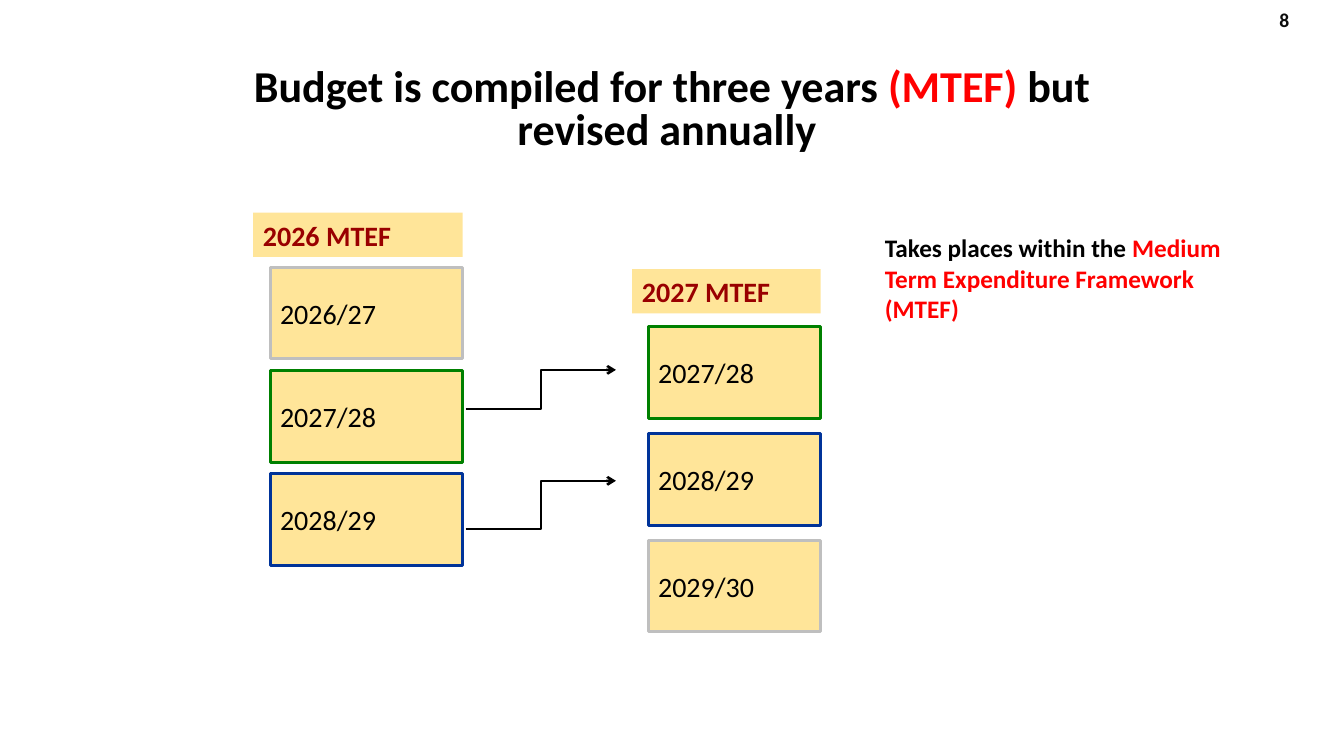
from dataclasses import dataclass

from lxml import etree
from pptx import Presentation
from pptx import util as u
from pptx.dml.color import RGBColor
from pptx.enum import shapes, text
from pptx.oxml import ns

prs = Presentation()
prs.slide_width, prs.slide_height = u.Inches(13.33), u.Inches(7.5)
s = prs.slides.add_slide(prs.slide_layouts[5])

BLACK, RED, MAROON, GOLD = "000000", "FF0000", "990000", "FFC000"
GREY, GREEN, BLUE = "BFBFBF", "008000", "003399"
BOX_H, HEADER_H = 12.13, 5.87


@dataclass
class Framework:
    """Budget cycle: a header over three year boxes, in percent of the slide."""
    title: str
    header_x: float
    header_y: float
    x: float
    y: float
    w: float
    pitch: float
    years: list[tuple[str, str]]


@dataclass
class Arrow:
    """Elbow arrow between two cycles, in percent of the slide."""
    start_y: float
    end_y: float


FRAMEWORKS = [
    Framework("2026 MTEF", 18.83, 28.13, 20.1, 35.33, 14.33, 13.67,
              [("2026/27", GREY), ("2027/28", GREEN), ("2028/29", BLUE)]),
    Framework("2027 MTEF", 47.03, 35.6, 48.23, 43.2, 12.83, 14.13,
              [("2027/28", GREEN), ("2028/29", BLUE), ("2029/30", GREY)]),
]
ARROWS = [Arrow(54.13, 48.93), Arrow(70, 63.6)]
ARROW_X = (34.65, 45.83)


def color(value: str) -> RGBColor:
    """Turn a hex string into a colour."""
    return RGBColor.from_string(value)


def px(share: float) -> int:
    """Convert a percentage of the slide width to a length."""
    return int(prs.slide_width * share / 100)


def py(share: float) -> int:
    """Convert a percentage of the slide height to a length."""
    return int(prs.slide_height * share / 100)


def area(x: float, y: float, w: float, h: float) -> tuple[int, int, int, int]:
    """Convert a rectangle in percent to lengths."""
    return px(x), py(y), px(w), py(h)


def write(sp, runs: list[tuple[str, str]], size: float, bold: bool = False,
          align=text.PP_ALIGN.LEFT, anchor=text.MSO_ANCHOR.MIDDLE, spacing=None) -> None:
    """Fill a shape with one paragraph of coloured runs."""
    tf = sp.text_frame
    tf.word_wrap = True
    tf.auto_size = text.MSO_AUTO_SIZE.NONE
    tf.vertical_anchor = anchor
    p = tf.paragraphs[0]
    p.alignment = align
    p.line_spacing = spacing
    for words, hue in runs:
        r = p.add_run()
        r.text = words
        r.font.name, r.font.size, r.font.bold = "Calibri", u.Pt(size), bold
        r.font.color.rgb = color(hue)


def draw_box(x: float, y: float, w: float, h: float, border: str | None = None):
    """Draw a pale gold rectangle with an optional border."""
    sp = s.shapes.add_shape(shapes.MSO_SHAPE.RECTANGLE, *area(x, y, w, h))
    sp.shadow.inherit = False
    sp.fill.solid()
    sp.fill.fore_color.rgb = color(GOLD)
    fill = sp.fill._xPr.find(ns.qn("a:solidFill"))
    etree.SubElement(fill[0], ns.qn("a:alpha"), val="40000")
    if border:
        sp.line.color.rgb = color(border)
        sp.line.width = u.Pt(2.25)
    else:
        sp.line.fill.background()
    return sp


def draw_framework(fw: Framework) -> None:
    """Draw the header and year boxes of one budget cycle."""
    for i, (year, border) in enumerate(fw.years):
        sp = draw_box(fw.x, fw.y + i * fw.pitch, fw.w, BOX_H, border)
        write(sp, [(year, BLACK)], 20)
    header = draw_box(fw.header_x, fw.header_y, fw.x + fw.w - fw.header_x, HEADER_H)
    write(header, [(fw.title, MAROON)], 20, bold=True)


def draw_arrow(arrow: Arrow) -> None:
    """Draw an elbow arrow from the first cycle to the second."""
    start_x, end_x = ARROW_X
    sp = s.shapes.add_connector(shapes.MSO_CONNECTOR.ELBOW, px(start_x), py(arrow.start_y),
                                px(end_x), py(arrow.end_y))
    sp.line.color.rgb = color(BLACK)
    sp.line.width = u.Pt(1.75)
    etree.SubElement(sp.line._get_or_add_ln(), ns.qn("a:tailEnd"), type="arrow")
    etree.SubElement(sp._element.spPr, ns.qn("a:effectLst"))


def main() -> None:
    """Build and save the slide."""
    title = s.shapes.title
    title.left, title.top, title.width, title.height = area(15.15, 8.53, 69.68, 12.27)
    write(title, [("Budget is compiled for three years ", BLACK), ("(MTEF) ", RED),
                  ("but revised annually ", BLACK)], 31.5, bold=True,
          align=text.PP_ALIGN.CENTER, spacing=u.Pt(30.8))
    for fw in FRAMEWORKS:
        draw_framework(fw)
    for arrow in ARROWS:
        draw_arrow(arrow)
    note = s.shapes.add_textbox(*area(65.1, 30.13, 27, 13.47))
    write(note, [("Takes places within the ", BLACK),
                 ("Medium Term Expenditure Framework (MTEF)", RED)], 18, bold=True,
          anchor=text.MSO_ANCHOR.TOP)
    number = s.shapes.add_textbox(*area(92.25, 0, 4.42, 5.33))
    write(number, [("8", "0D0D0D")], 14, bold=True, align=text.PP_ALIGN.RIGHT)
    prs.save("out.pptx")


if __name__ == "__main__":
    main()
